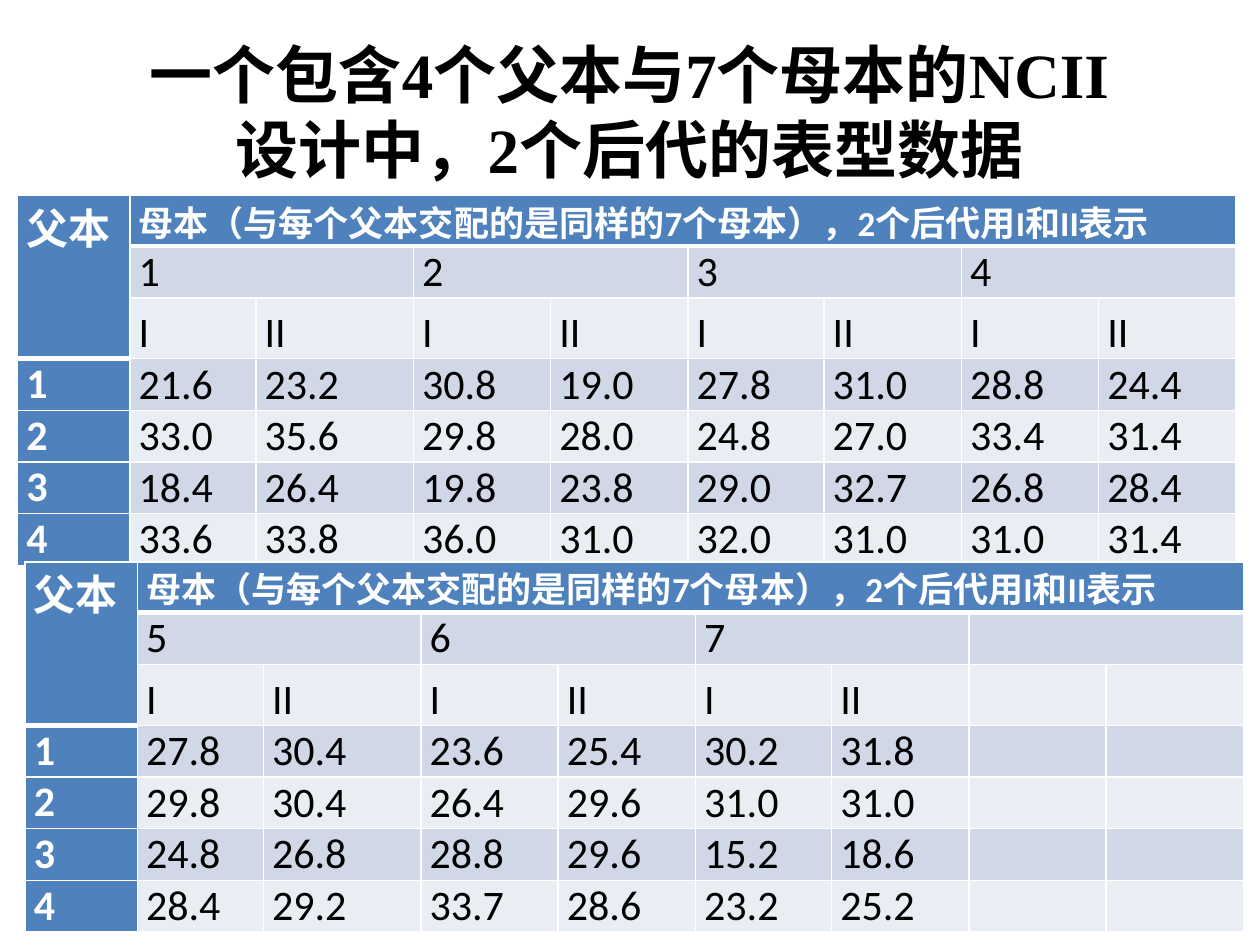
"""Build a slide with phenotype data of an NCII mating design in two tables."""
from lxml import etree
from pptx import Presentation
from pptx.dml.color import RGBColor
from pptx.enum.text import MSO_ANCHOR, PP_ALIGN
from pptx.oxml.ns import qn
from pptx.util import Inches, Pt

MIDDLE, BOTTOM, TOP = MSO_ANCHOR.MIDDLE, MSO_ANCHOR.BOTTOM, MSO_ANCHOR.TOP
CENTER, JUSTIFY, LEFT = PP_ALIGN.CENTER, PP_ALIGN.JUSTIFY, PP_ALIGN.LEFT
WHITE, BLACK, BLUE = "FFFFFF", "000000", "4F81BD"
BANDS = ("E9EDF4", "D0D8E8")

TITLE = "一个包含4个父本与7个母本的NCII设计中，2个后代的表型数据"
MALE = "父本"
FEMALE = "母本（与每个父本交配的是同样的7个母本），2个后代用I和II表示"
PROGENY = ("I", "II")
COLUMNS = (0.89, 1, 1.25, 1.09, 1.09, 1.08, 1.09, 1.09, 1.09)
ROWS = (0.4, 0.41, 0.48, 0.41, 0.41, 0.41, 0.41)
TABLES = [
    {"left": 0.14, "top": 1.55, "females": ("1", "2", "3", "4"), "values": [
        ("21.6", "23.2", "30.8", "19.0", "27.8", "31.0", "28.8", "24.4"),
        ("33.0", "35.6", "29.8", "28.0", "24.8", "27.0", "33.4", "31.4"),
        ("18.4", "26.4", "19.8", "23.8", "29.0", "32.7", "26.8", "28.4"),
        ("33.6", "33.8", "36.0", "31.0", "32.0", "31.0", "31.0", "31.4")]},
    {"left": 0.2, "top": 4.46, "females": ("5", "6", "7"), "values": [
        ("27.8", "30.4", "23.6", "25.4", "30.2", "31.8"),
        ("29.8", "30.4", "26.4", "29.6", "31.0", "31.0"),
        ("24.8", "26.8", "28.8", "29.6", "15.2", "18.6"),
        ("28.4", "29.2", "33.7", "28.6", "23.2", "25.2")]},
]


def rgb(value):
    return RGBColor.from_string(value)


def write(frame, text, size=24, font="Calibri", color=BLACK, bold=False, align=LEFT):
    para = frame.paragraphs[0]
    para.alignment = align
    span = para.add_run()
    span.text = text
    span.font.size = Pt(size)
    span.font.name = font
    span.font.bold = bold
    span.font.color.rgb = rgb(color)


def set_border(cell, side, points):
    properties = cell._tc.get_or_add_tcPr()
    line = etree.SubElement(properties, qn(f"a:ln{side}"), w=str(Pt(points)))
    fill = etree.SubElement(line, qn("a:solidFill"))
    etree.SubElement(fill, qn("a:srgbClr"), val=WHITE)


def style_cell(cell, row, column):
    header = row == 0 or column == 0
    thick_top = (row == 1 and column > 0) or (row == 3 and column == 0)
    thick_bottom = row == 0 or (row == 2 and column == 0)
    widths = {"L": 1, "R": 1, "T": 3 if thick_top else 1, "B": 3 if thick_bottom else 1}
    for side, points in widths.items():
        set_border(cell, side, points)
    cell.fill.solid()
    cell.fill.fore_color.rgb = rgb(BLUE if header else BANDS[row % 2])
    cell.margin_left = cell.margin_right = Inches(0.07)
    cell.margin_top = cell.margin_bottom = 0
    cell.vertical_anchor = BOTTOM if row > 1 and not header else TOP


def add_data_table(page, left, top, females, values):
    table = page.shapes.add_table(
        len(ROWS), len(COLUMNS), Inches(left), Inches(top),
        Inches(sum(COLUMNS)), Inches(sum(ROWS))).table
    table.first_row = table.horz_banding = False
    for column, width in zip(table.columns, COLUMNS):
        column.width = Inches(width)
    for row, height in zip(table.rows, ROWS):
        row.height = Inches(height)
    for row in range(len(ROWS)):
        for column in range(len(COLUMNS)):
            style_cell(table.cell(row, column), row, column)

    table.cell(0, 0).merge(table.cell(2, 0))
    table.cell(0, 1).merge(table.cell(0, len(COLUMNS) - 1))
    for column in range(1, len(COLUMNS), 2):
        table.cell(1, column).merge(table.cell(1, column + 1))

    write(table.cell(0, 0).text_frame, MALE, color=WHITE, bold=True, align=JUSTIFY)
    write(table.cell(0, 1).text_frame, FEMALE, size=20, color=WHITE, bold=True, align=JUSTIFY)
    for index, female in enumerate(females):
        write(table.cell(1, 1 + 2 * index).text_frame, female, align=JUSTIFY)
    records = [PROGENY * len(females)] + values
    for row, record in enumerate(records, start=2):
        if row > 2:
            write(table.cell(row, 0).text_frame, str(row - 2), color=WHITE, bold=True)
        for column, value in enumerate(record, start=1):
            write(table.cell(row, column).text_frame, value)


def main():
    deck = Presentation()
    deck.slide_width, deck.slide_height = Inches(10), Inches(7.5)
    page = deck.slides.add_slide(deck.slide_layouts[5])
    title = page.shapes.title
    title.left, title.top = Inches(0.98), Inches(0.29)
    title.width, title.height = Inches(8.03), Inches(1.18)
    title.text_frame.vertical_anchor = MIDDLE
    write(title.text_frame, TITLE, size=36, font="Times New Roman", bold=True, align=CENTER)
    for content in TABLES:
        add_data_table(page, **content)
    deck.save("out.pptx")


if __name__ == "__main__":
    main()
